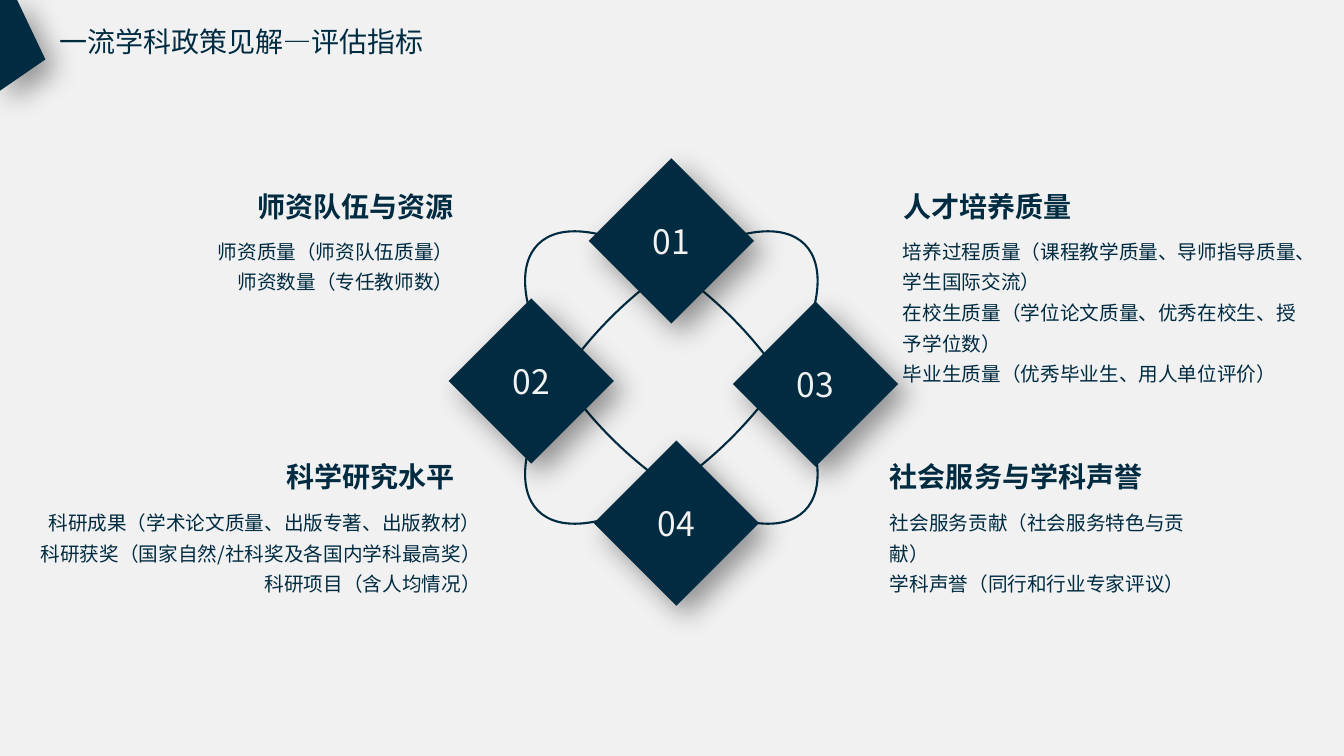
from lxml.etree import SubElement
from pptx import Presentation
from pptx.dml.color import RGBColor
from pptx.enum.shapes import MSO_SHAPE as Preset
from pptx.enum.text import MSO_ANCHOR as Anchor, MSO_AUTO_SIZE as AutoSize, PP_ALIGN as Align
from pptx.oxml.ns import qn
from pptx.util import Inches, Pt

WIDTH, HEIGHT = Inches(13.33), Inches(7.5)
COLUMNS, ROWS = 40, 30
NAVY, PAPER, PALE = "002B41", "F1F1F1", "F2F2F2"
FONT = "Noto Sans CJK SC"
DIAMOND_SIZE = (4.92, 6.56)
ORBIT = (14.37, 11.6, 11.22, 6.76)

DIAMONDS = [
    ("01", 17.52, 6.28),
    ("03", 21.81, 11.96),
    ("04", 17.67, 17.48),
    ("02", 13.35, 11.84),
]

INDICATORS = [
    ("社会服务与学科声誉", (26.19, 18.04, 9.6), (26.19, 19.8, 10.11, 2.84), Align.LEFT,
     ["社会服务贡献（社会服务特色与贡献）", "学科声誉（同行和行业专家评议）"]),
    ("人才培养质量", (26.58, 7.32, 9.96), (26.58, 9.04, 12.75, 6.52), Align.LEFT,
     ["培养过程质量（课程教学质量、导师指导质量、学生国际交流）",
      "在校生质量（学位论文质量、优秀在校生、授予学位数）",
      "毕业生质量（优秀毕业生、用人单位评价）"]),
    ("科学研究水平", (8.13, 18.04, 5.7), (0.78, 19.8, 13.83, 4.08), Align.RIGHT,
     ["科研成果（学术论文质量、出版专著、出版教材）",
      "科研获奖（国家自然/社科奖及各国内学科最高奖）",
      "科研项目（含人均情况）"]),
    ("师资队伍与资源", (6.21, 7.32, 7.59), (3.69, 9.04, 10.11, 2.84), Align.RIGHT,
     ["师资质量（师资队伍质量）", "师资数量（专任教师数）"]),
]


def color(hex_code):
    return RGBColor.from_string(hex_code)


def across(columns):
    return round(WIDTH * columns / COLUMNS)


def down(rows):
    return round(HEIGHT * rows / ROWS)


def place(left, top, width, height):
    return across(left), down(top), across(width), down(height)


def paint(shape, hex_code):
    shape.fill.solid()
    shape.fill.fore_color.rgb = color(hex_code)
    shape.line.fill.background()


def cast_shadow(shape):
    shape.shadow.inherit = False
    effects = shape.element.spPr.find(qn("a:effectLst"))
    shadow = SubElement(effects, qn("a:outerShdw"), blurRad=str(Pt(20)), dist=str(Pt(10)),
                        dir=str(45 * 60000), algn="tl", rotWithShape="0")
    tint = SubElement(shadow, qn("a:srgbClr"), val="000000")
    SubElement(tint, qn("a:alpha"), val="40000")


def write(paragraph, text, size, ink, bold=False):
    run = paragraph.add_run()
    run.text = text
    font = run.font
    font.name, font.size, font.bold = FONT, Pt(size), bold
    font.color.rgb = color(ink)
    SubElement(run._r.get_or_add_rPr(), qn("a:ea"), typeface=FONT)


def add_text(slide, box, lines, size, align=Align.LEFT, bold=False, spacing=None, wrap=True):
    frame = slide.shapes.add_textbox(*place(*box)).text_frame
    frame.word_wrap = wrap
    frame.auto_size = AutoSize.SHAPE_TO_FIT_TEXT
    for index, line in enumerate(lines):
        paragraph = frame.add_paragraph() if index else frame.paragraphs[0]
        paragraph.alignment = align
        paragraph.line_spacing = spacing
        write(paragraph, line, size, NAVY, bold)


def add_corner(slide):
    points = [(across(x), down(y)) for x, y in [(0.51, 0), (0, 0), (0, 3.6), (1.35, 2.36)]]
    outline = slide.shapes.build_freeform(*points[0])
    outline.add_line_segments(points[1:], close=True)
    corner = outline.convert_to_shape()
    paint(corner, NAVY)
    cast_shadow(corner)


def add_orbit(slide, angle):
    orbit = slide.shapes.add_shape(Preset.OVAL, *place(*ORBIT))
    orbit.rotation = angle
    orbit.shadow.inherit = False
    orbit.fill.background()
    orbit.line.color.rgb = color(NAVY)
    orbit.line.width = Pt(1.5)


def add_diamond(slide, number, left, top):
    diamond = slide.shapes.add_shape(Preset.FLOWCHART_DECISION, *place(left, top, *DIAMOND_SIZE))
    paint(diamond, NAVY)
    cast_shadow(diamond)
    frame = diamond.text_frame
    frame.vertical_anchor = Anchor.MIDDLE
    frame.paragraphs[0].alignment = Align.CENTER
    write(frame.paragraphs[0], number, 24, PALE)


def add_indicator(slide, heading, heading_box, detail_box, align, details):
    add_text(slide, (*heading_box, 1.76), [heading], 20, align, bold=True)
    add_text(slide, detail_box, details, 14, align, spacing=1.3)


def main():
    deck = Presentation()
    deck.slide_width, deck.slide_height = WIDTH, HEIGHT
    slide = deck.slides.add_slide(deck.slide_layouts[6])
    slide.background.fill.solid()
    slide.background.fill.fore_color.rgb = color(PAPER)

    add_text(slide, (1.47, 0.76, 11.61, 1.76), ["一流学科政策见解—评估指标"], 20, wrap=False)
    add_corner(slide)
    for angle in (45, 135):
        add_orbit(slide, angle)
    for diamond in DIAMONDS:
        add_diamond(slide, *diamond)
    for indicator in INDICATORS:
        add_indicator(slide, *indicator)
    deck.save("out.pptx")


if __name__ == "__main__":
    main()
